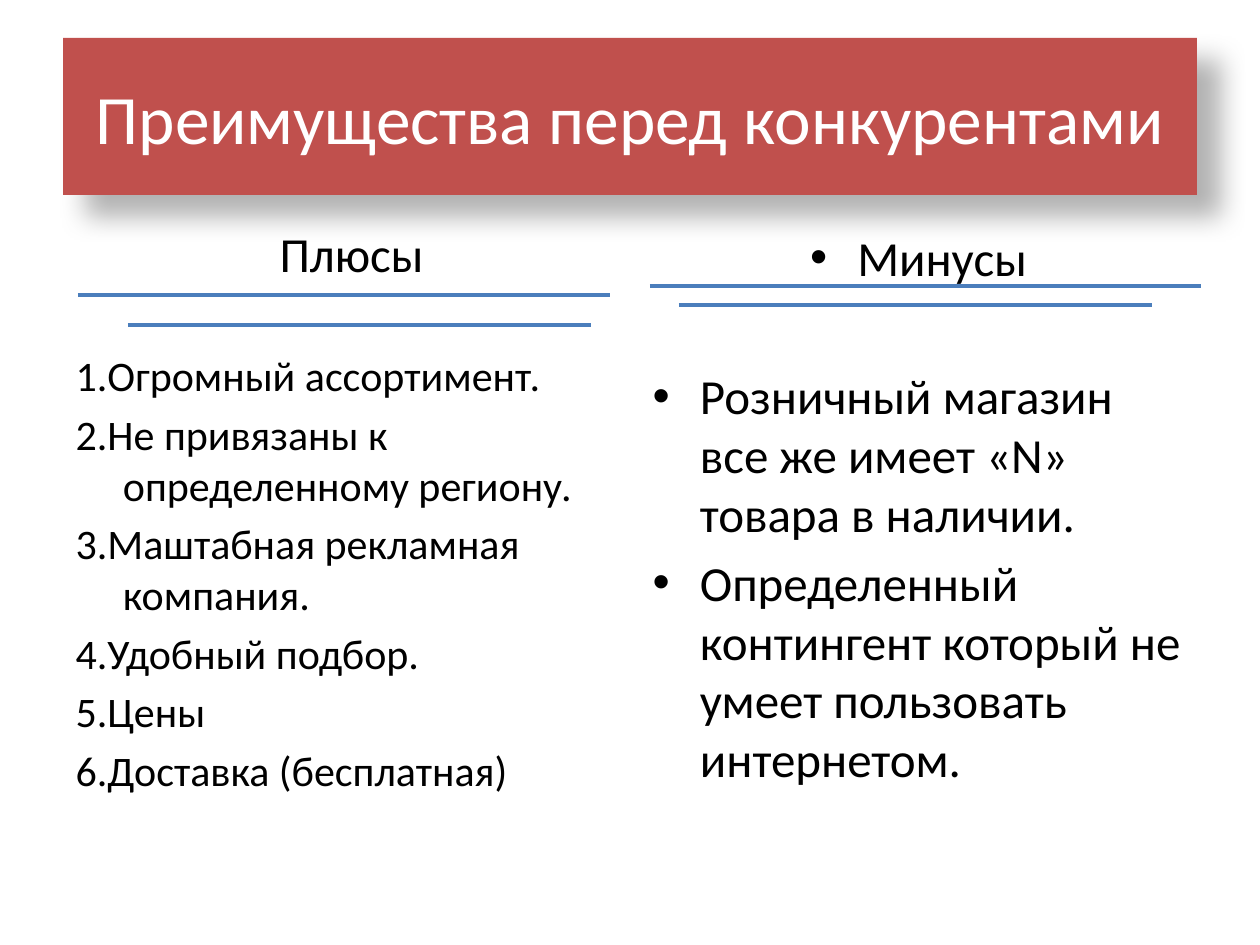
"""Build a slide that weighs the pluses and minuses against competitors."""
from dataclasses import dataclass

from lxml.etree import SubElement
from pptx import Presentation
from pptx.dml.color import RGBColor
from pptx.enum.shapes import MSO_CONNECTOR
from pptx.enum.text import MSO_ANCHOR, MSO_AUTO_SIZE, PP_ALIGN
from pptx.oxml.ns import qn
from pptx.util import Emu, Pt


@dataclass(frozen=True)
class Theme:
    font: str = "Calibri"
    banner: RGBColor = RGBColor(0xC0, 0x50, 0x4D)
    banner_text: RGBColor = RGBColor(0xFF, 0xFF, 0xFF)
    text: RGBColor = RGBColor(0, 0, 0)
    rule: RGBColor = RGBColor(0x4B, 0x7E, 0xBC)
    shadow: str = "000000"
    title_size: float = 39.6
    large_size: int = 28
    small_size: int = 24
    rule_width: float = 2.25


THEME = Theme()
PX_PER_INCH = 126

PLUSES = [
    "1.Огромный ассортимент.",
    "2.Не привязаны к определенному региону.",
    "3.Маштабная рекламная компания.",
    "4.Удобный подбор.",
    "5.Цены",
    "6.Доставка (бесплатная)",
]
MINUSES = [
    "Розничный магазин все же имеет «N» товара в наличии.",
    "Определенный контингент который не умеет пользовать интернетом.",
]
RULES = [(78, 610, 295), (128, 591, 325), (650, 1201, 286), (679, 1152, 305)]


def px(length):
    return Emu(round(length * 914400 / PX_PER_INCH))


def place(shape, left, top, width, height):
    shape.left, shape.top = px(left), px(top)
    shape.width, shape.height = px(width), px(height)
    shape.text_frame.word_wrap = True
    shape.text_frame.auto_size = MSO_AUTO_SIZE.NONE


def style(paragraph, size, color):
    paragraph.font.name = THEME.font
    paragraph.font.size = Pt(size)
    paragraph.font.color.rgb = color


def add_shadow(shape):
    effects = SubElement(shape._element.spPr, qn("a:effectLst"))
    shadow = SubElement(
        effects, qn("a:outerShdw"), blurRad=str(Pt(15)), dist=str(Pt(18)),
        dir=str(45 * 60000), algn="tl", rotWithShape="0")
    color = SubElement(shadow, qn("a:srgbClr"), val=THEME.shadow)
    SubElement(color, qn("a:alpha"), val="30000")


def fill_banner(banner, wording):
    place(banner, 63, 38, 1134, 157)
    banner.fill.solid()
    banner.fill.fore_color.rgb = THEME.banner
    add_shadow(banner)
    banner.text_frame.vertical_anchor = MSO_ANCHOR.MIDDLE
    banner.text_frame.text = wording
    heading = banner.text_frame.paragraphs[0]
    heading.alignment = PP_ALIGN.CENTER
    style(heading, THEME.title_size, THEME.banner_text)


def fill_column(column, heading, items, item_size, gap, bulleted):
    frame = column.text_frame
    frame.text = "\n".join([heading, *items])
    for paragraph in frame.paragraphs:
        style(paragraph, item_size, THEME.text)
        if not bulleted:
            SubElement(paragraph._p.get_or_add_pPr(), qn("a:buNone"))
    title = frame.paragraphs[0]
    title.alignment = PP_ALIGN.CENTER
    title.font.size = Pt(THEME.large_size)
    title.space_after = Pt(gap)


def add_rule(slide, start, end, y):
    rule = slide.shapes.add_connector(
        MSO_CONNECTOR.STRAIGHT, px(start), px(y), px(end), px(y))
    rule.line.color.rgb = THEME.rule
    rule.line.width = Pt(THEME.rule_width)
    SubElement(rule._element.spPr, qn("a:effectLst"))


def main():
    deck = Presentation()
    deck.slide_width, deck.slide_height = px(1260), px(945)
    slide = deck.slides.add_slide(deck.slide_layouts[3])
    fill_banner(slide.shapes.title, "Преимущества перед конкурентами")

    pluses, minuses = slide.placeholders[1], slide.placeholders[2]
    place(pluses, 63, 217, 577, 627)
    fill_column(pluses, "Плюсы", PLUSES, THEME.small_size, 34, False)
    place(minuses, 640, 221, 557, 623)
    fill_column(minuses, "Минусы", MINUSES, THEME.large_size, 40, True)

    for start, end, y in RULES:
        add_rule(slide, start, end, y)
    deck.save("out.pptx")


if __name__ == "__main__":
    main()
